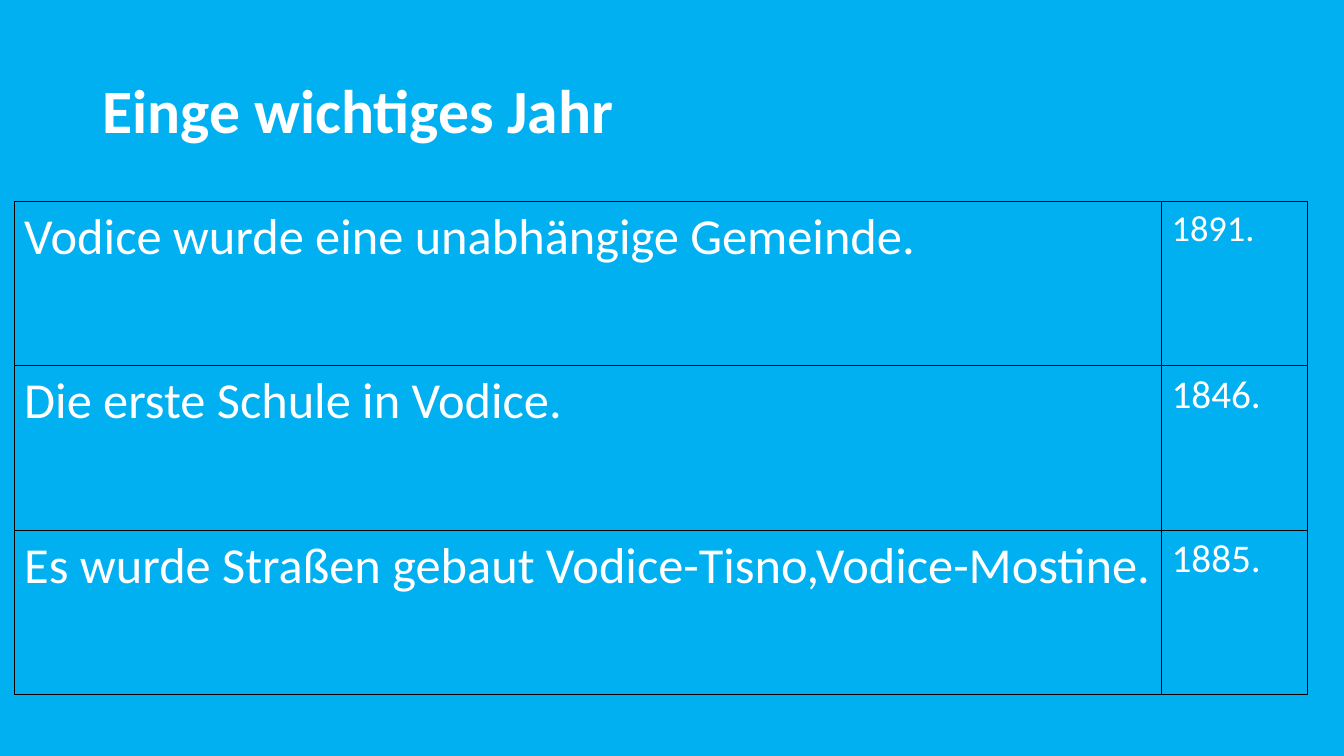
import pptx
import pptx.dml.color
import pptx.enum.text
import pptx.oxml
import pptx.oxml.ns
import pptx.util

Inches = pptx.util.Inches
COLORS = {"sky": "00B0F0", "text": "FFFFFF", "border": "000000"}
EVENTS = [
    ("Vodice wurde eine unabhängige Gemeinde.", "1891.", 26),
    ("Die erste Schule in Vodice.", "1846.", 28),
    ("Es wurde Straßen gebaut Vodice-Tisno,Vodice-Mostine.", "1885.", 28),
]


class SlideBuilder:
    def __init__(self, prs):
        self.font = {"name": "Calibri", "bold": False}
        self.slide = prs.slides.add_slide(prs.slide_layouts[6])
        fill = self.slide.background.fill
        fill.solid()
        fill.fore_color.rgb = self.color("sky")

    def color(self, name):
        return pptx.dml.color.RGBColor.from_string(COLORS[name])

    def add_text(self, tf, text, size, **extra):
        p = tf.paragraphs[0]
        r = p.add_run()
        r.text = text
        values = {**self.font, "size": pptx.util.Pt(size), **extra}
        for key, value in values.items():
            setattr(r.font, key, value)
        r.font.color.rgb = self.color("text")
        return p

    def title(self, text, left, top, width, height):
        sp = self.slide.shapes.add_textbox(
            Inches(left), Inches(top), Inches(width), Inches(height))
        tf = sp.text_frame
        tf.word_wrap = True
        tf.vertical_anchor = pptx.enum.text.MSO_ANCHOR.MIDDLE
        p = self.add_text(tf, text, 44, bold=True)
        p.line_spacing = 0.9

    def border(self, cell):
        tc_pr = cell._tc.get_or_add_tcPr()
        ns = pptx.oxml.ns.nsdecls("a")
        for i, side in enumerate(("lnL", "lnR", "lnT", "lnB")):
            tc_pr.insert(i, pptx.oxml.parse_xml(
                f'<a:{side} {ns} w="12700"><a:solidFill>'
                f'<a:srgbClr val="{COLORS["border"]}"/>'
                f'</a:solidFill></a:{side}>'))

    def table(self, events, left, top, widths, row_height):
        table = self.slide.shapes.add_table(
            len(events), len(widths), Inches(left), Inches(top),
            Inches(sum(widths)), Inches(row_height * len(events))).table
        for flag in ("first_row", "horz_banding"):
            setattr(table, flag, False)
        for col, width in zip(table.columns, widths):
            col.width = Inches(width)
        for row, (event, year, year_size) in zip(table.rows, events):
            row.height = Inches(row_height)
            texts = ((event, 36), (year, year_size))
            for cell, (text, size) in zip(row.cells, texts):
                cell.fill.background()
                self.border(cell)
                self.add_text(cell.text_frame, text, size)


def main():
    prs = pptx.Presentation()
    prs.slide_width = Inches(13.33)
    prs.slide_height = Inches(7.5)
    s = SlideBuilder(prs)
    s.title("Einge wichtiges Jahr", 0.92, 0.4, 11.5, 1.45)
    s.table(EVENTS, 0.14, 2, (11.38, 1.45), 1.63)
    prs.save("out.pptx")


if __name__ == "__main__":
    main()
